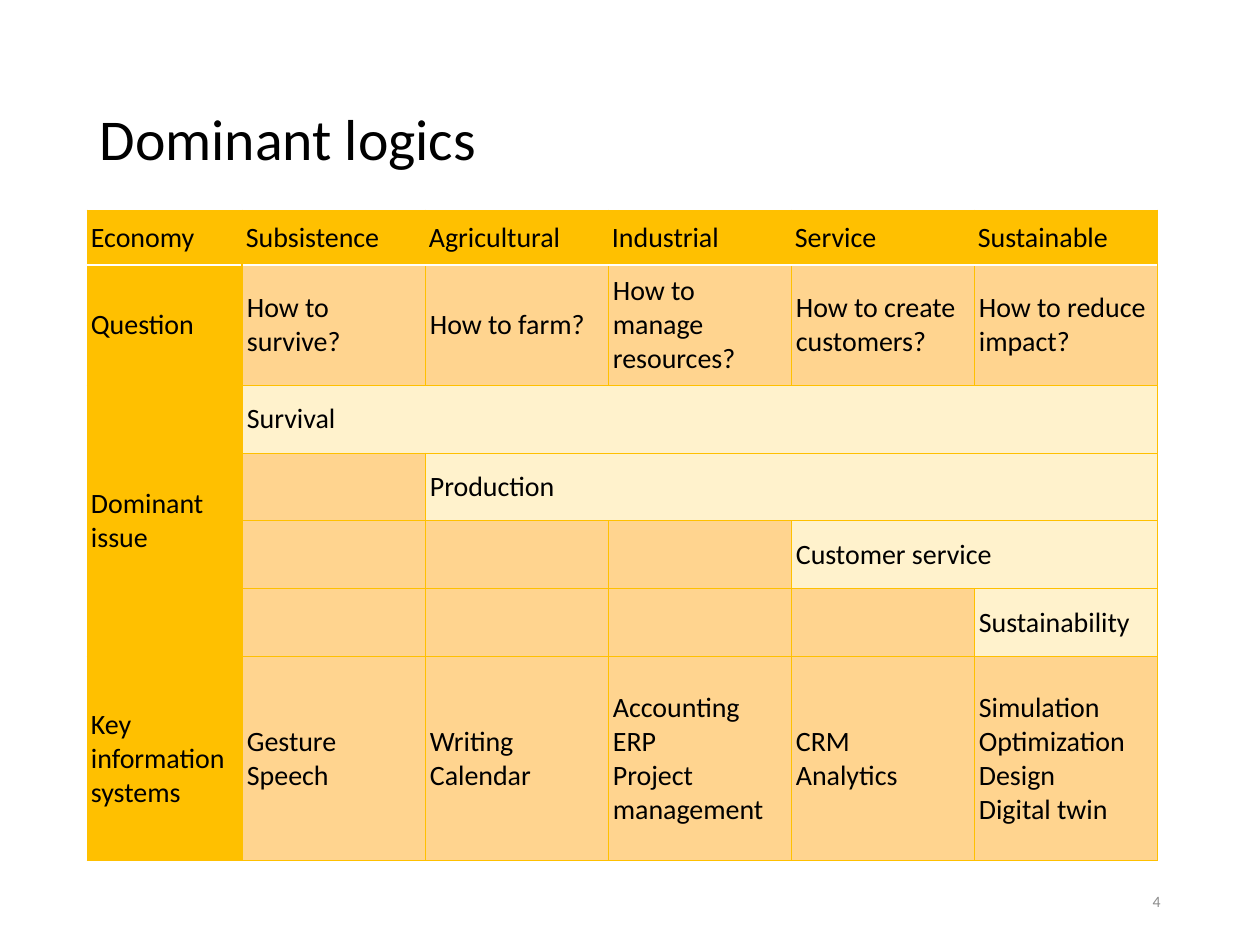
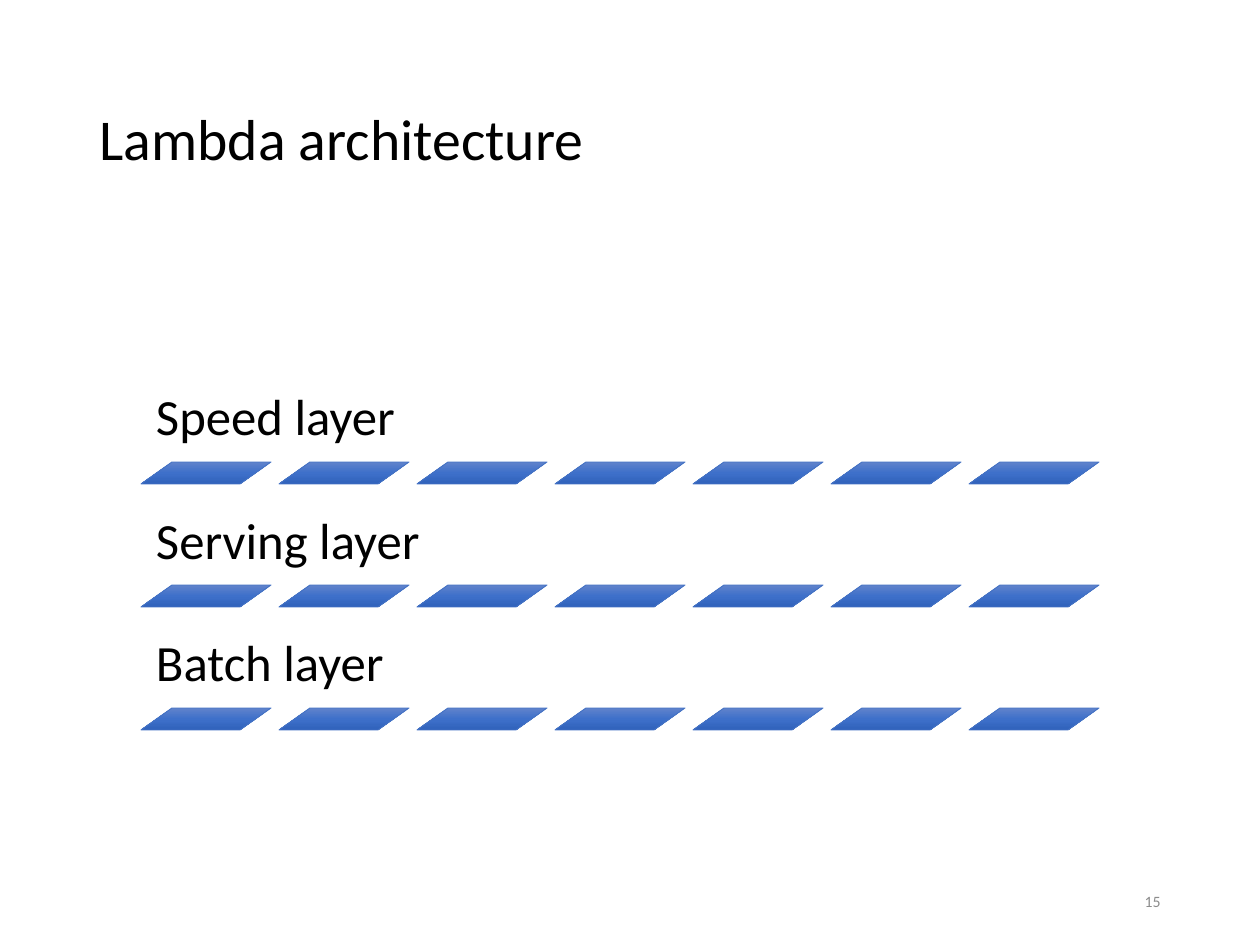
from copy import deepcopy
from lxml.etree import SubElement
from pptx import Presentation
from pptx.dml.color import RGBColor
from pptx.enum.shapes import MSO_SHAPE
from pptx.enum.text import MSO_ANCHOR, MSO_AUTO_SIZE, PP_ALIGN
from pptx.oxml.ns import qn
from pptx.util import Emu, Pt

FONT = "Calibri"
BLACK, WHITE, GRAY = "000000", "FFFFFF", "8C8C8C"
GOLD, ORANGE, CREAM = "FFC000", "FFD48F", "FFF2CC"
BLUE = "4472C4"
BAR_STOPS = [(0, "6183CB"), (0.5, "3E70CA"), (1, "3062BB")]

SLIDE_W, SLIDE_H = 1260, 945
TITLE_BOX = (87, 50, 1086, 183)
NUMBER_BOX = (890, 876, 283, 50)

# "\n" starts a paragraph, "\v" breaks a line
ECONOMIES = ["Economy", "Subsistence", "Agricultural", "Industrial", "Service", "Sustainable"]
QUESTIONS = ["Question", "How to survive?", "How to farm?", "How to manage resources?",
             "How to create customers?", "How to reduce impact?"]
ISSUES = [("Survival", 1), ("Production", 2), ("Customer service", 4), ("Sustainability", 5)]
SYSTEMS = ["Key information systems", "Gesture\vSpeech", "Writing\nCalendar",
           "Accounting\nERP\nProject management", "CRM\nAnalytics",
           "Simulation\nOptimization\nDesign\nDigital twin"]
LAYERS = ["Speed layer", "Serving layer", "Batch layer"]


def px(n):
    return Emu(round(n * 914400 / 126))


def rgb(color):
    return RGBColor.from_string(color)


def write(tf, text, size, color=BLACK, align=PP_ALIGN.LEFT, spacing=1.0):
    tf.text = text
    for p in tf.paragraphs:
        p.alignment = align
        p.line_spacing = spacing
        for r in p.runs:
            r.font.name, r.font.size = FONT, Pt(size)
            r.font.color.rgb = rgb(color)


def add_text(shapes, box, text, anchor=MSO_ANCHOR.MIDDLE, inset=None, **fmt):
    tf = shapes.add_textbox(*map(px, box)).text_frame
    tf.word_wrap = True
    tf.vertical_anchor = anchor
    if inset is not None:
        tf.margin_left = tf.margin_right = tf.margin_top = tf.margin_bottom = px(inset)
    write(tf, text, **fmt)


def add_slide(prs, title, number):
    s = prs.slides.add_slide(prs.slide_layouts[5])
    # Title
    sp = s.shapes.title
    sp.left, sp.top, sp.width, sp.height = map(px, TITLE_BOX)
    tf = sp.text_frame
    tf.auto_size = MSO_AUTO_SIZE.NONE
    tf.vertical_anchor = MSO_ANCHOR.MIDDLE
    write(tf, title, size=33, spacing=0.9)
    # Slide number
    add_text(s.shapes, NUMBER_BOX, number, size=9, color=GRAY, align=PP_ALIGN.RIGHT)
    return s


def set_borders(cell, **sides):
    tcPr = cell._tc.get_or_add_tcPr()
    for side in "LRTB":
        color, width = sides.get(side, (GOLD, 0.5))
        ln = SubElement(tcPr, qn("a:ln" + side), w=str(Pt(width)))
        SubElement(SubElement(ln, qn("a:solidFill")), qn("a:srgbClr"), val=color)


def format_cell(cell, text, fill, inset, **borders):
    cell.margin_left = cell.margin_right = cell.margin_top = cell.margin_bottom = px(inset)
    cell.vertical_anchor = MSO_ANCHOR.MIDDLE
    set_borders(cell, **borders)
    cell.fill.solid()
    cell.fill.fore_color.rgb = rgb(fill)
    write(cell.text_frame, text, size=16)


def logic_table(s, box):
    col_w = [155] + [183] * 5
    row_h = [55, 120] + [68] * 4 + [204]
    issue_rows = [[""] * start + [issue] + [""] * (5 - start) for issue, start in ISSUES]
    issue_rows[0][0] = "Dominant issue"
    rows = [ECONOMIES, QUESTIONS, *issue_rows, SYSTEMS]
    frame = s.shapes.add_table(len(rows), len(col_w), *map(px, box))
    tbl = frame.table
    tbl.first_row = tbl.horz_banding = False
    for col, w in zip(tbl.columns, col_w):
        col.width = px(w)
    for row, h in zip(tbl.rows, row_h):
        row.height = px(h)

    # Cells
    issue_start = {i: start for i, (_, start) in enumerate(ISSUES, 2)}
    for i, texts in enumerate(rows):
        for j, text in enumerate(texts):
            cell = tbl.cell(i, j)
            if i == 0:
                format_cell(cell, text, GOLD, 4, B=(WHITE, 1))
            elif j == 0:
                format_cell(cell, text, GOLD, 4, R=(GOLD, 1))
            else:
                fill = CREAM if j >= issue_start.get(i, 6) else ORANGE
                top = (WHITE, 1) if i == 1 else (GOLD, 0.5)
                format_cell(cell, text, fill, 5, T=top)

    # Spans
    tbl.cell(2, 0).merge(tbl.cell(5, 0))
    for i, start in issue_start.items():
        if start < 5:
            tbl.cell(i, start).merge(tbl.cell(i, 5))


def add_bar(shapes, box):
    sp = shapes.add_shape(MSO_SHAPE.PARALLELOGRAM, *map(px, box))
    sp.shadow.inherit = False
    sp.adjustments[0] = 1.41
    sp.line.color.rgb = rgb(BLUE)
    sp.line.width = Pt(0.5)
    sp.fill.gradient()
    sp.fill.gradient_angle = 270
    gs_list = sp._element.spPr.find(".//" + qn("a:gsLst"))
    gs_list.insert(1, deepcopy(gs_list[0]))
    for stop, (position, color) in zip(sp.fill.gradient_stops, BAR_STOPS):
        stop.position = position
        stop.color.rgb = rgb(color)


def layer_stack(s, box, pitch=123, label_h=89, bars=7):
    x, y, w, _ = box
    shapes = s.shapes.add_group_shape().shapes
    for i, layer in enumerate(LAYERS):
        top = y + i * pitch
        add_text(shapes, (x, top, w, label_h), layer, MSO_ANCHOR.BOTTOM, 15,
                 size=29, spacing=0.9)
        for j in range(bars):
            add_bar(shapes, (x + j * 138, top + label_h, 130, 22))


def main():
    prs = Presentation()
    prs.slide_width, prs.slide_height = px(SLIDE_W), px(SLIDE_H)
    logic_table(add_slide(prs, "Dominant logics", "4"), (87, 210, 1070, 651))
    layer_stack(add_slide(prs, "Lambda architecture", "15"), (141, 373, 978, 357))
    prs.save("out.pptx")


if __name__ == "__main__":
    main()
